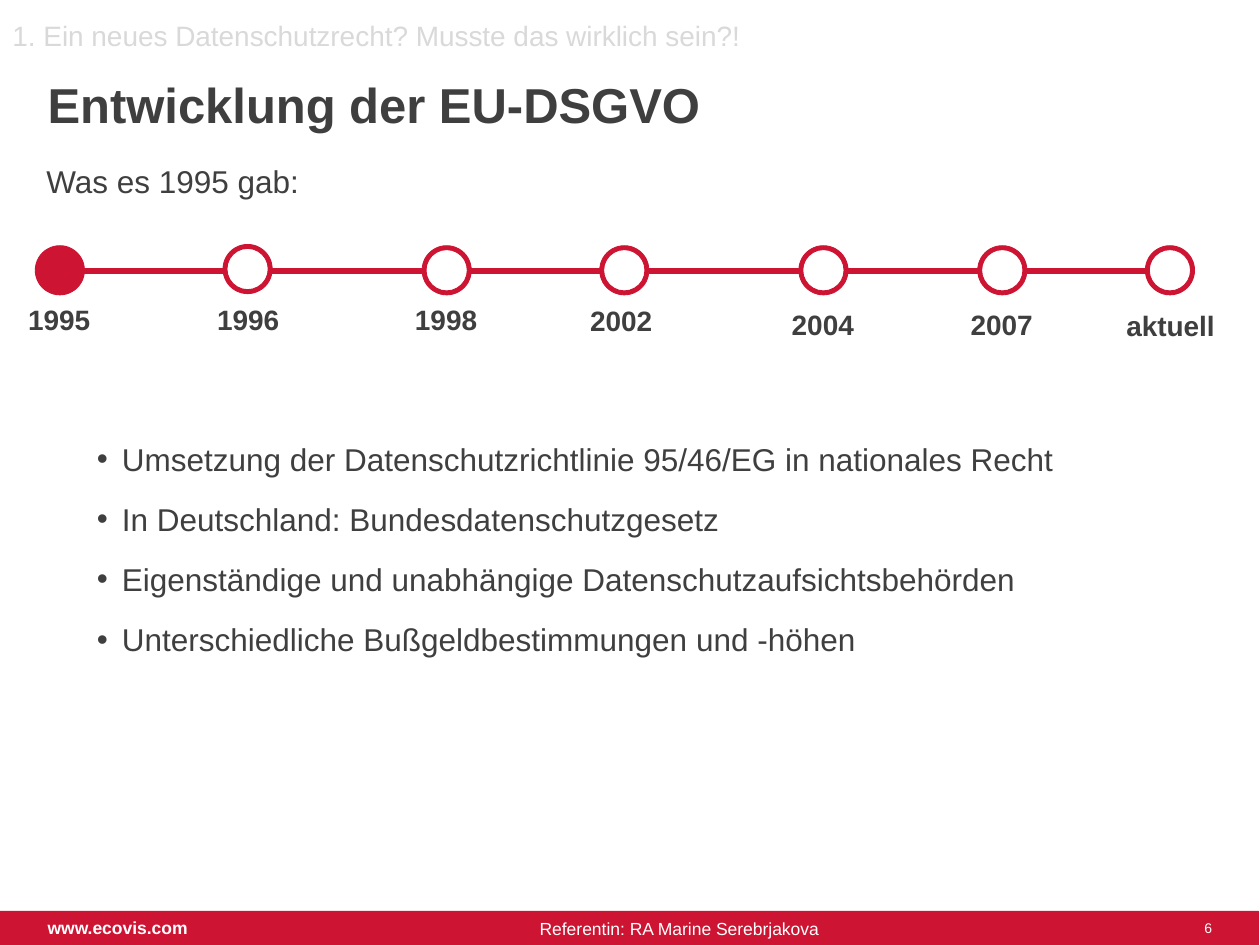
from itertools import pairwise

from lxml import etree
from pptx import Presentation
from pptx import util as u
from pptx.dml.color import RGBColor
from pptx.enum import shapes, text
from pptx.oxml.ns import qn

RED, DARK, PALE, WHITE = "CD1432", "3F3F3F", "D9D9D9", "FFFFFF"
NODE = 0.39
MILESTONES = [
    # label, node left, node top, label left, label top, label height
]
MILESTONES = [
    ("1995", 0.28, 1.95, -0.67, 2.38, 1.56),
    ("1996", 1.77, 1.94, 0.83, 2.38, 1.31),
    ("1998", 3.35, 1.95, 2.4, 2.38, 1.56),
    ("2002", 4.76, 1.95, 3.79, 2.39, 1.8),
    ("2004", 6.34, 1.95, 5.39, 2.42, 2.04),
    ("2007", 7.76, 1.95, 6.81, 2.42, 2.04),
    ("aktuell", 9.09, 1.95, 8.15, 2.43, 2.04),
]
BULLETS = [
    "Umsetzung der Datenschutzrichtlinie 95/46/EG in nationales Recht",
    "In Deutschland: Bundesdatenschutzgesetz",
    "Eigenständige und unabhängige Datenschutzaufsichtsbehörden",
    "Unterschiedliche Bußgeldbestimmungen und -höhen",
]


def rgb(value):
    """Turn a hex string into a colour."""
    return RGBColor.from_string(value)


def inches(box):
    """Turn a box given in inches into lengths."""
    return [u.Inches(v) for v in box]


def add_bullet(p, indent):
    """Give a paragraph a hanging bullet."""
    pPr = p._p.get_or_add_pPr()
    pPr.set("marL", str(u.Inches(indent)))
    pPr.set("indent", str(-u.Inches(indent)))
    etree.SubElement(pPr, qn("a:buFont"), typeface="Arial")
    etree.SubElement(pPr, qn("a:buChar"), char="•")


def add_text(s, box, lines, size=18, color=DARK, bold=False, align="LEFT",
             anchor="TOP", spacing=None, before=0, bullet=None):
    """Place a text box with one paragraph for each line."""
    tf = s.shapes.add_textbox(*inches(box)).text_frame
    tf.word_wrap = True
    tf.vertical_anchor = getattr(text.MSO_ANCHOR, anchor)
    for i, line in enumerate(lines):
        p = tf.paragraphs[0] if i == 0 else tf.add_paragraph()
        if bullet:
            add_bullet(p, bullet)
        p.alignment = getattr(text.PP_ALIGN, align)
        if spacing:
            p.line_spacing = spacing
        if i:
            p.space_before = u.Pt(before)
        r = p.add_run()
        r.text = line
        r.font.name, r.font.size, r.font.bold = "Arial", u.Pt(size), bold
        r.font.color.rgb = rgb(color)


def add_shape(s, kind, box, line_width):
    """Place a red preset shape without a shadow."""
    sp = s.shapes.add_shape(kind, *inches(box))
    sp.shadow.inherit = False
    sp.fill.solid()
    sp.fill.fore_color.rgb = rgb(RED)
    sp.line.color.rgb = rgb(RED)
    sp.line.width = u.Pt(line_width)
    return sp


def add_line(s, x1, x2, y):
    """Draw a horizontal red line."""
    line = s.shapes.add_connector(shapes.MSO_CONNECTOR.STRAIGHT, *inches((x1, y, x2, y)))
    line.line.color.rgb = rgb(RED)
    line.line.width = u.Pt(3)
    etree.SubElement(line._element.spPr, qn("a:effectLst"))


def add_header(s, left, top):
    """Place the chapter line, the title and the introduction."""
    add_text(s, (left, top, 8.39, 0.34),
             ["1. Ein neues Datenschutzrecht? Musste das wirklich sein?!"],
             size=16, color=PALE, spacing=0.9)
    add_text(s, (left + 0.28, top + 0.41, 7.8, 0.87), ["Entwicklung der EU-DSGVO"],
             size=28, bold=True)
    add_text(s, (left + 0.27, top + 1.11, 8.9, 0.39), ["Was es 1995 gab:"])


def add_timeline(s, milestones, axis):
    """Place the joined milestones with the first one filled."""
    for (_, a, *_), (_, b, *_) in pairwise(milestones):
        add_line(s, b, a + NODE, axis)
    for i, (label, x, y, label_x, label_y, height) in enumerate(milestones):
        kind = shapes.MSO_SHAPE.DONUT if i else shapes.MSO_SHAPE.OVAL
        sp = add_shape(s, kind, (x, y, NODE, NODE), 0.5)
        if i:
            sp.adjustments[0] = 0.08
        add_text(s, (label_x, label_y, 2.28, height), [label], size=16, bold=True,
                 align="CENTER", spacing=0.9)


def add_footer(s, left, top, width, height):
    """Place the red bar with address, speaker and page number."""
    add_shape(s, shapes.MSO_SHAPE.RECTANGLE, (left, top, width, height), 0.25)
    style = {"color": WHITE, "anchor": "MIDDLE"}
    add_text(s, (left + 0.29, top + 0.06, 3.05, 0.14), ["www.ecovis.com"],
             size=10, bold=True, **style)
    add_text(s, (left + 3.59, top + 0.06, 3.62, 0.16),
             ["Referentin: RA Marine Serebrjakova"], size=10, align="CENTER", **style)
    add_text(s, (left + 9.33, top + 0.05, 0.4, 0.17), ["6"], size=8, align="RIGHT", **style)


def main():
    """Build and save the slide."""
    prs = Presentation()
    prs.slide_width, prs.slide_height = u.Inches(10), u.Inches(7.5)
    s = prs.slides.add_slide(prs.slide_layouts[6])
    add_footer(s, -0.01, 7.23, 10, 0.27)
    add_header(s, 0, 0.13)
    add_timeline(s, MILESTONES, 2.15)
    add_text(s, (0.67, 3.44, 8.27, 2.06), BULLETS, before=12.8, bullet=0.2)
    prs.save("out.pptx")


if __name__ == "__main__":
    main()
